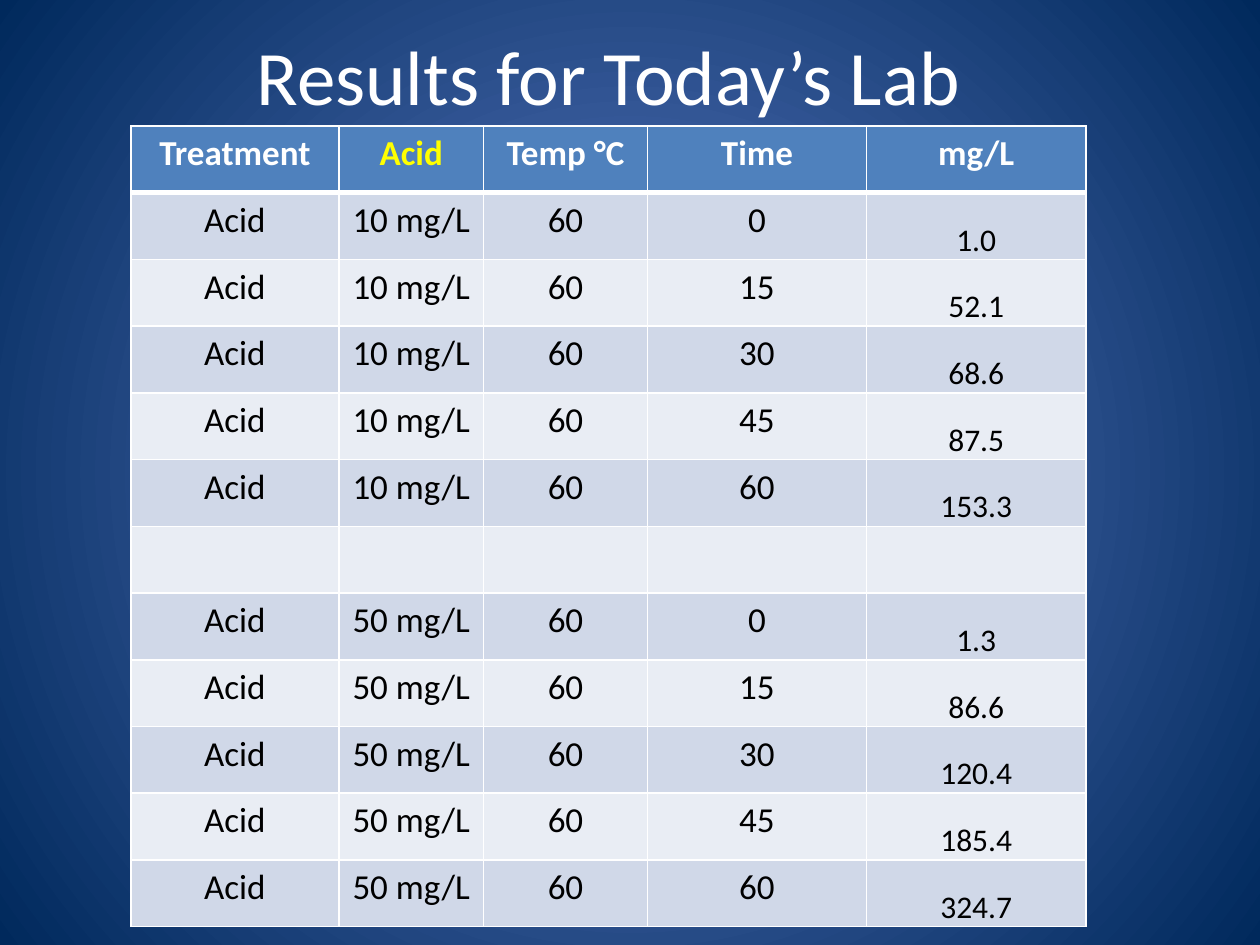
from lxml import etree
from pptx import Presentation
from pptx.dml.color import RGBColor
from pptx.enum import text
from pptx.oxml import parse_xml
from pptx.oxml.ns import nsdecls, qn
from pptx.util import Cm, Pt

# Content
TITLE = "Results for Today’s Lab"
HEADER = ["Treatment", "Acid", "Temp °C", "Time", "mg/L"]
TIMES = ["0", "15", "30", "45", "60"]
RESULTS = {
    "10 mg/L": ["1.0", "52.1", "68.6", "87.5", "153.3"],
    "50 mg/L": ["1.3", "86.6", "120.4", "185.4", "324.7"],
}
COLORS = {
    "white": "FFFFFF", "black": "000000", "yellow": "FFFF00",
    "header": "4F81BD", "odd": "D0D8E8", "even": "E9EDF4",
    "center": "5E7CC5", "edge": "00295C",
}
COL_WIDTHS = [4.19, 2.92, 3.3, 4.42, 4.42]
TABLE_LEFT, TABLE_TOP, TABLE_HEIGHT = 2.64, 2.54, 16.15


def rgb(name):
    return RGBColor.from_string(COLORS[name])


def write(tf, content, size=20, color="black", bold=False):
    p = tf.paragraphs[0]
    p.alignment = text.PP_ALIGN.CENTER
    r = p.add_run()
    r.text = content
    r.font.name = "Calibri"
    r.font.size = Pt(size)
    r.font.bold = bold
    r.font.color.rgb = rgb(color)


def set_borders(cell, **widths):
    tc_pr = cell._tc.get_or_add_tcPr()
    for i, side in enumerate("LRTB"):
        ln = parse_xml(
            f'<a:ln{side} {nsdecls("a")} w="{Pt(widths.get(side, 1))}"><a:solidFill>'
            f'<a:srgbClr val="{COLORS["white"]}"/></a:solidFill></a:ln{side}>')
        tc_pr.insert(i, ln)


def set_background(s):
    fill = s.background.fill
    fill.gradient()
    for stop, name in zip(fill.gradient_stops, ("center", "edge")):
        stop.color.rgb = rgb(name)
    grad = s._element.find(".//" + qn("a:gradFill"))
    grad.remove(grad.find(qn("a:lin")))
    radial = etree.SubElement(grad, qn("a:path"), {"path": "circle"})
    etree.SubElement(radial, qn("a:fillToRect"), dict.fromkeys("ltrb", "50000"))


def add_results(s):
    # One group of rows per acid dose, with an empty row between groups
    rows = [HEADER]
    for dose, values in RESULTS.items():
        if len(rows) > 1:
            rows.append([""] * len(HEADER))
        rows += [["Acid", dose, "60", t, v] for t, v in zip(TIMES, values)]

    tbl = s.shapes.add_table(
        len(rows), len(HEADER), Cm(TABLE_LEFT), Cm(TABLE_TOP),
        Cm(sum(COL_WIDTHS)), Cm(TABLE_HEIGHT)).table
    for col, width in zip(tbl.columns, COL_WIDTHS):
        col.width = Cm(width)

    for i, row in enumerate(rows):
        band = "header" if i == 0 else ("odd" if i % 2 else "even")
        for j, content in enumerate(row):
            cell = tbl.cell(i, j)
            cell.fill.solid()
            cell.fill.fore_color.rgb = rgb(band)
            set_borders(cell, T=3 if i == 1 else 1, B=3 if i == 0 else 1)
            if i == 0:
                color = "yellow" if content == "Acid" else "white"
                write(cell.text_frame, content, color=color, bold=True)
            elif content:
                measured = j == len(HEADER) - 1
                write(cell.text_frame, content, size=18 if measured else 20)
                if measured:
                    cell.vertical_anchor = text.MSO_ANCHOR.BOTTOM
                    cell.margin_left = cell.margin_right = cell.margin_top = Cm(0.03)
                    cell.margin_bottom = 0


def main():
    prs = Presentation()
    prs.slide_width, prs.slide_height = Cm(25.4), Cm(19.05)
    s = prs.slides.add_slide(prs.slide_layouts[6])
    set_background(s)

    # Title
    sp = s.shapes.add_textbox(Cm(0.84), Cm(-0.08), Cm(22.86), Cm(3.18))
    tf = sp.text_frame
    tf.word_wrap = True
    tf.vertical_anchor = text.MSO_ANCHOR.MIDDLE
    write(tf, TITLE, size=44, color="white")

    # Results table
    add_results(s)
    prs.save("out.pptx")


if __name__ == "__main__":
    main()
